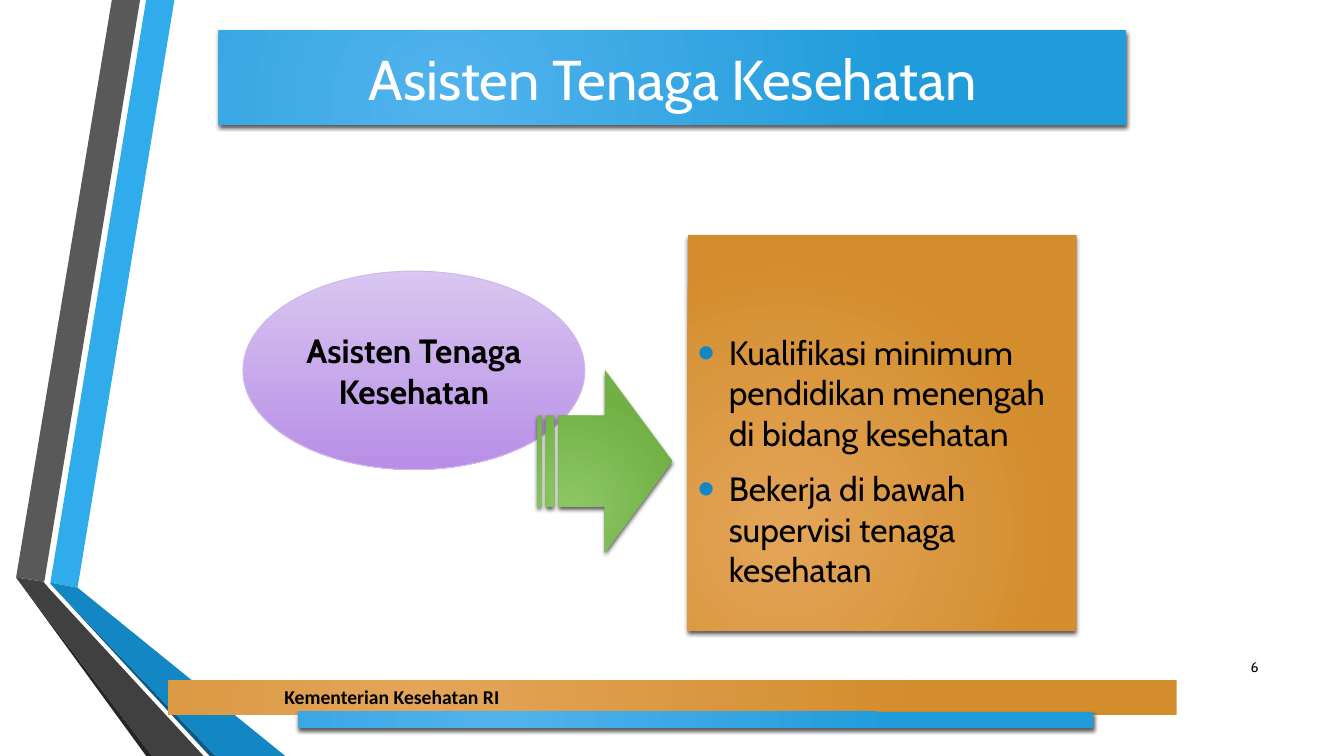
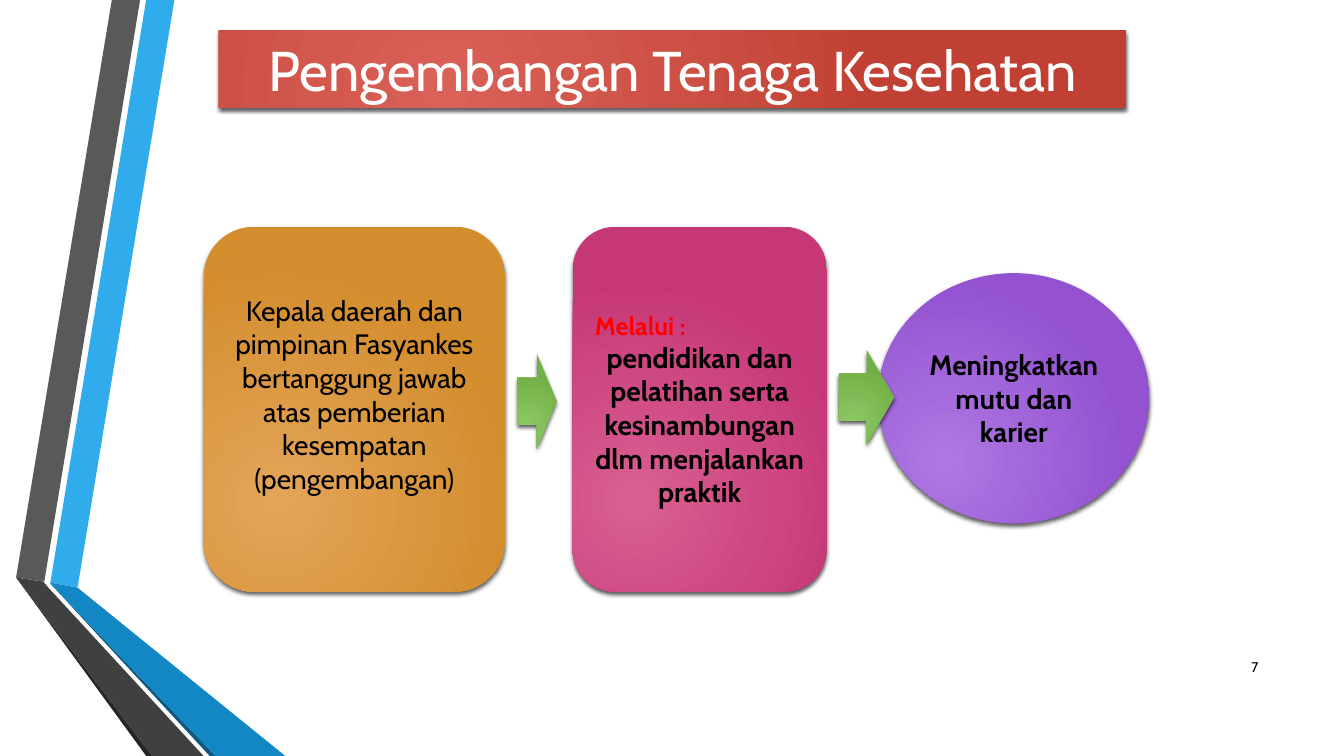
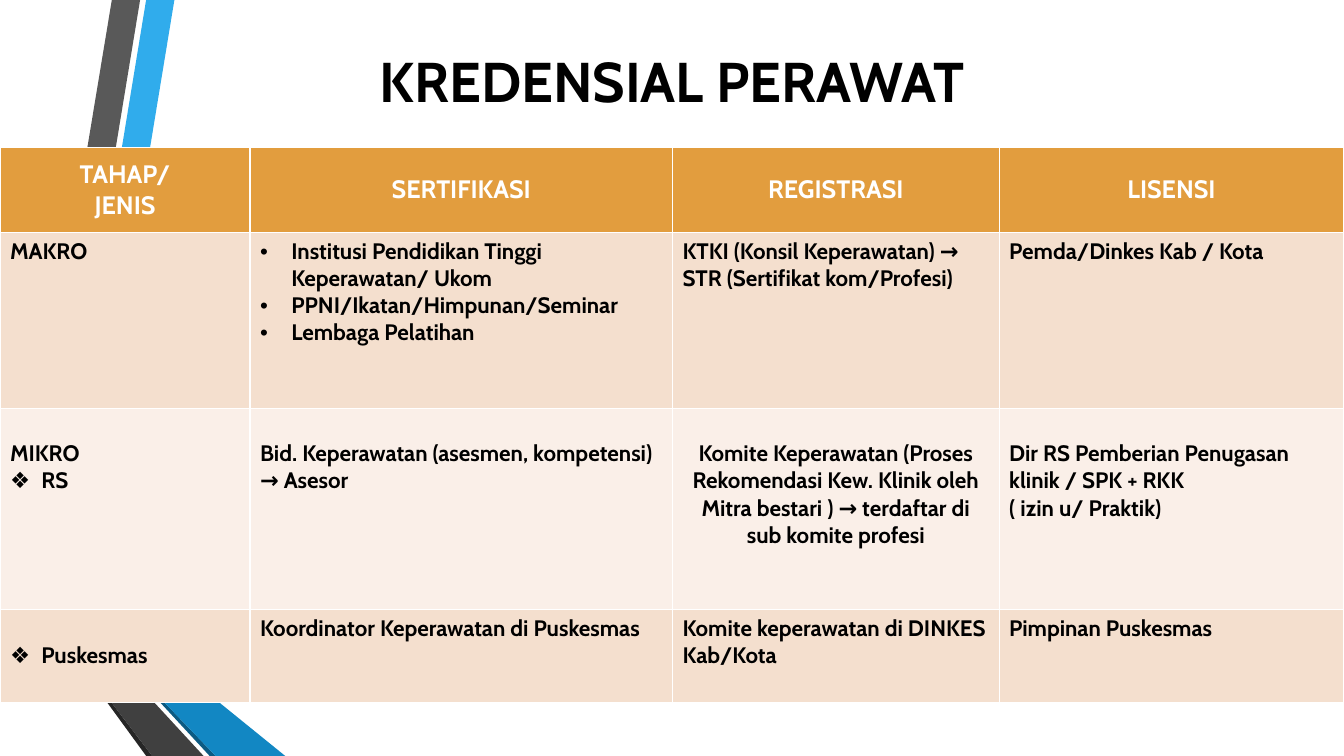
from lxml.etree import SubElement
from pptx import Presentation
from pptx.dml.color import RGBColor
from pptx.enum.shapes import MSO_SHAPE
from pptx.enum.text import MSO_ANCHOR, MSO_AUTO_SIZE, PP_ALIGN
from pptx.oxml.ns import qn
from pptx.util import Inches, Pt

# Shared look
FONT = "Cabin"
FOOTER_FONT = "Calibri"
BLACK = RGBColor(0x00, 0x00, 0x00)
WHITE = RGBColor(0xFF, 0xFF, 0xFF)
RED_TEXT = RGBColor(0xFF, 0x00, 0x00)
BULLET_BLUE = RGBColor(0x12, 0x87, 0xC3)
HEADER_ORANGE = RGBColor(0xE2, 0x9D, 0x3E)
BAND_DARK = RGBColor(0xF4, 0xDF, 0xCE)
BAND_LIGHT = RGBColor(0xFA, 0xEF, 0xE8)
LILAC_LINE = RGBColor(0xD0, 0xB8, 0xEE)

# Gradients: inner or top colour, outer or bottom colour
BLUE = (RGBColor(0x51, 0xB3, 0xED), RGBColor(0x21, 0x9C, 0xDB))
ORANGE = (RGBColor(0xE4, 0xA5, 0x59), RGBColor(0xD3, 0x8D, 0x2D))
RED = (RGBColor(0xD9, 0x61, 0x57), RGBColor(0xC0, 0x40, 0x33))
PINK = (RGBColor(0xD9, 0x5F, 0x92), RGBColor(0xC6, 0x37, 0x77))
PURPLE = (RGBColor(0xAE, 0x78, 0xE3), RGBColor(0x94, 0x52, 0xD1))
GREEN = (RGBColor(0x8C, 0xC7, 0x64), RGBColor(0x72, 0xAF, 0x45))
LILAC = (RGBColor(0xD9, 0xC6, 0xF1), RGBColor(0xB8, 0x8E, 0xE6))

# Ribbon facets: colour and corner points in inches
RIBBON_FACETS = [
    (RGBColor(0x30, 0xAC, 0xEC), [(0.5, 5.78), (0.77, 5.83), (1.73, 0), (1.45, 0)]),
    (RGBColor(0x59, 0x59, 0x59), [(1.39, 0), (1.11, 0), (0.16, 5.73), (0.44, 5.77)]),
    (RGBColor(0x26, 0x26, 0x26), [(0.16, 5.73), (1.45, 7.5), (1.51, 7.5)]),
    (RGBColor(0x0C, 0x5A, 0x82), [(0.5, 5.79), (2.08, 7.5), (2.14, 7.5)]),
    (BULLET_BLUE, [(0.5, 5.79), (2.14, 7.5), (2.83, 7.5), (0.77, 5.83), (0.5, 5.78)]),
    (RGBColor(0x40, 0x40, 0x40),
     [(2.02, 7.5), (0.48, 5.83), (0.43, 5.77), (0.16, 5.73), (1.51, 7.5)]),
]


def inches(box):
    return [Inches(length) for length in box]


def add_ribbon(layout, slide):
    """Build the folded ribbon once and move it to the layout."""
    ribbon = slide.shapes.add_group_shape()
    for colour, points in RIBBON_FACETS:
        corners = [(Inches(x), Inches(y)) for x, y in points]
        builder = ribbon.shapes.build_freeform(*corners[0], scale=1.0)
        builder.add_line_segments(corners[1:], close=True)
        facet = builder.convert_to_shape()
        facet.shadow.inherit = False
        facet.fill.solid()
        facet.fill.fore_color.rgb = colour
        facet.line.fill.background()
    for number, properties in enumerate(ribbon.element.iter(qn("p:cNvPr")), 100):
        properties.set("id", str(number))
    layout.shapes.element.insert(2, ribbon.element)


def paint(shape, colours, radial=True, shadow=True):
    """Two-colour gradient, with an optional soft shadow below."""
    shape.fill.gradient()
    for stop, colour in zip(shape.fill.gradient_stops, colours):
        stop.color.rgb = colour
    if radial:
        gradient = shape.element.spPr.find(qn("a:gradFill"))
        gradient.remove(gradient.find(qn("a:lin")))
        circle = SubElement(gradient, qn("a:path"), path="circle")
        SubElement(circle, qn("a:fillToRect"),
                   l="50000", t="100000", r="100000", b="50000")
    else:
        shape.fill.gradient_angle = 270
    shape.line.fill.background()
    shape.shadow.inherit = False
    if shadow:
        effects = shape.element.spPr.find(qn("a:effectLst"))
        outer = SubElement(effects, qn("a:outerShdw"), blurRad=str(Pt(3)),
                           dist=str(Pt(2)), dir="5400000", rotWithShape="0")
        black = SubElement(outer, qn("a:srgbClr"), val=str(BLACK))
        SubElement(black, qn("a:alpha"), val="64000")


def add_block(shapes, kind, box, colours, **look):
    block = shapes.add_shape(kind, *inches(box))
    paint(block, colours, **look)
    return block


def write(frame, texts, size, colour=BLACK, bold=False, align=PP_ALIGN.CENTER, font=FONT):
    """One paragraph per text; returns the paragraphs."""
    frame.word_wrap = True
    for position, text in enumerate(texts):
        paragraph = frame.add_paragraph() if position else frame.paragraphs[0]
        paragraph.alignment = align
        run = paragraph.add_run()
        run.text = text
        run.font.name = font
        run.font.size = Pt(size)
        run.font.bold = bold
        run.font.color.rgb = colour
    return frame.paragraphs


def add_bullet(paragraph, mark, colour=None, percent=100):
    properties = paragraph._p.get_or_add_pPr()
    properties.set("marL", str(Inches(0.31)))
    properties.set("indent", str(-Inches(0.31)))
    if colour is not None:
        SubElement(SubElement(properties, qn("a:buClr")), qn("a:srgbClr"), val=str(colour))
    SubElement(properties, qn("a:buSzPct"), val=str(percent * 1000))
    SubElement(properties, qn("a:buFont"), typeface="Arial")
    SubElement(properties, qn("a:buChar"), char=mark)


def set_title(slide, box, text, colours=None):
    title = slide.shapes.title
    title.left, title.top, title.width, title.height = inches(box)
    if colours:
        paint(title, colours)
    frame = title.text_frame
    frame.auto_size = MSO_AUTO_SIZE.NONE
    frame.vertical_anchor = MSO_ANCHOR.MIDDLE
    write(frame, [text], 40, WHITE if colours else BLACK, bold=not colours)


def add_page_number(slide, number):
    page = slide.shapes.add_textbox(*inches((11.98, 6.42, 0.6, 0.4))).text_frame
    page.vertical_anchor = MSO_ANCHOR.MIDDLE
    write(page, [str(number)], 10, align=PP_ALIGN.RIGHT)


def add_ministry_footer(slide, box):
    left, top, width, height = box
    footer = slide.shapes.add_group_shape()
    band = add_block(footer.shapes, MSO_SHAPE.RECTANGLE, (left, top, width, height), ORANGE)
    band.text_frame.margin_left = Inches(1.15)
    band.text_frame.vertical_anchor = MSO_ANCHOR.TOP
    write(band.text_frame, ["Kementerian Kesehatan RI"], 14, bold=True,
          align=PP_ALIGN.LEFT, font=FOOTER_FONT)
    add_block(footer.shapes, MSO_SHAPE.RECTANGLE,
              (left + 1.29, top + 0.31, 7.88, 0.16), BLUE)


def add_assistant_definition(slide, box):
    """Term in an ellipse, an arrow, and its definition."""
    left, top, width, height = box
    definition_width = 3.86
    definition = add_block(
        slide.shapes, MSO_SHAPE.RECTANGLE,
        (left + width - definition_width, top, definition_width, height), ORANGE)
    definition.text_frame.margin_top = Inches(0.6)
    definition.text_frame.vertical_anchor = MSO_ANCHOR.MIDDLE
    points = write(definition.text_frame, [
        "Kualifikasi minimum pendidikan menengah di bidang kesehatan",
        "Bekerja di bawah supervisi tenaga kesehatan",
    ], 24, align=PP_ALIGN.LEFT)
    for point in points:
        point.space_before = Pt(5)
        point.space_after = Pt(6)
        add_bullet(point, "•", BULLET_BLUE, 145)

    term = add_block(slide.shapes, MSO_SHAPE.OVAL, (left, top + 0.36, 3.39, 1.97),
                     LILAC, radial=False, shadow=False)
    term.line.color.rgb = LILAC_LINE
    term.line.width = Pt(0.75)
    write(term.text_frame, ["Asisten Tenaga Kesehatan"], 24, bold=True)
    add_block(slide.shapes, MSO_SHAPE.STRIPED_RIGHT_ARROW,
              (left + 2.92, top + 1.34, 1.34, 1.81), GREEN)


def add_development_flow(slide, box):
    """Responsibility, means and result, joined by block arrows."""
    left, top, width, height = box
    duty = add_block(slide.shapes, MSO_SHAPE.ROUNDED_RECTANGLE,
                     (left, top, 2.99, height), ORANGE)
    duty.text_frame.margin_bottom = Inches(0.35)
    write(duty.text_frame, [
        "Kepala daerah dan pimpinan Fasyankes bertanggung jawab atas "
        "pemberian kesempatan (pengembangan)"], 20)

    means = add_block(slide.shapes, MSO_SHAPE.ROUNDED_RECTANGLE,
                      (left + 3.66, top, 2.52, height), PINK)
    lead, _ = write(means.text_frame, [
        "Melalui :",
        "pendidikan dan pelatihan serta kesinambungan dlm menjalankan praktik",
    ], 20, bold=True)
    lead.alignment = PP_ALIGN.LEFT
    lead.runs[0].font.size = Pt(18)
    lead.runs[0].font.color.rgb = RED_TEXT

    result_width = 2.69
    result = add_block(slide.shapes, MSO_SHAPE.OVAL,
                       (left + width - result_width, top + 0.46, result_width, 2.48), PURPLE)
    write(result.text_frame, ["Meningkatkan mutu dan karier"], 20, bold=True)

    for x, y, arrow_width in [(3.11, 1.26, 0.39), (6.3, 1.22, 0.55)]:
        add_block(slide.shapes, MSO_SHAPE.RIGHT_ARROW,
                  (left + x, top + y, arrow_width, 0.94), GREEN)


def format_cell(cell, fill, lowered=False):
    """White borders, plain fill; lowered text starts one line down."""
    properties = cell._tc.get_or_add_tcPr()
    for side in ("lnL", "lnR", "lnT", "lnB"):
        border = SubElement(properties, qn(f"a:{side}"), w=str(Pt(1)))
        SubElement(SubElement(border, qn("a:solidFill")), qn("a:srgbClr"), val=str(WHITE))
    cell.fill.solid()
    cell.fill.fore_color.rgb = fill
    if lowered:
        cell.margin_top = Inches(0.32)


CREDENTIAL_HEADER = [["TAHAP/", "JENIS"], ["SERTIFIKASI"], ["REGISTRASI"], ["LISENSI"]]
# A leading bullet mark in a text becomes a real bullet
CREDENTIAL_ROWS = [
    [["MAKRO"],
     ["•Institusi Pendidikan Tinggi Keperawatan/ Ukom",
      "•PPNI/Ikatan/Himpunan/Seminar",
      "•Lembaga Pelatihan"],
     ["KTKI (Konsil Keperawatan) → STR (Sertifikat kom/Profesi)"],
     ["Pemda/Dinkes Kab / Kota"]],
    [["MIKRO", "❖RS"],
     ["Bid. Keperawatan (asesmen, kompetensi) → Asesor"],
     ["Komite Keperawatan (Proses Rekomendasi Kew. Klinik oleh Mitra bestari ) "
      "→ terdaftar di sub komite profesi"],
     ["Dir RS Pemberian Penugasan klinik / SPK + RKK", "( izin u/ Praktik)"]],
    [["❖Puskesmas"],
     ["Koordinator Keperawatan di Puskesmas"],
     ["Komite keperawatan di DINKES Kab/Kota"],
     ["Pimpinan Puskesmas"]],
]
LOWERED_CELLS = {(2, 0), (2, 1), (2, 2), (2, 3), (3, 0)}
CENTRED_CELL = (2, 2)


def add_credential_table(slide, box):
    column_widths = [2.48, 4.19, 3.24, 3.42]
    row_heights = [0.85, 1.74, 2, 0.92]
    table = slide.shapes.add_table(
        len(row_heights), len(column_widths), *inches(box)).table
    table.horz_banding = False
    for column, column_width in zip(table.columns, column_widths):
        column.width = Inches(column_width)
    for row, row_height in zip(table.rows, row_heights):
        row.height = Inches(row_height)

    for column, texts in enumerate(CREDENTIAL_HEADER):
        heading = table.cell(0, column)
        format_cell(heading, HEADER_ORANGE)
        heading.vertical_anchor = MSO_ANCHOR.MIDDLE
        write(heading.text_frame, texts, 18, WHITE, bold=True)

    for row, entries in enumerate(CREDENTIAL_ROWS, 1):
        for column, texts in enumerate(entries):
            place = (row, column)
            cell = table.cell(row, column)
            format_cell(cell, BAND_DARK if row % 2 else BAND_LIGHT, place in LOWERED_CELLS)
            align = PP_ALIGN.CENTER if place == CENTRED_CELL else PP_ALIGN.LEFT
            lines = write(cell.text_frame, [text.lstrip("•❖") for text in texts],
                          16, bold=True, align=align)
            for line, text in zip(lines, texts):
                if text[0] in "•❖":
                    add_bullet(line, text[0])


def main():
    prs = Presentation()
    prs.slide_width, prs.slide_height = Inches(13.33), Inches(7.5)
    layout = prs.slide_layouts[5]

    # Health assistants
    assistants = prs.slides.add_slide(layout)
    add_ribbon(layout, assistants)
    set_title(assistants, (2.17, 0.3, 9, 0.94), "Asisten Tenaga Kesehatan", BLUE)
    add_page_number(assistants, 6)
    add_assistant_definition(assistants, (2.41, 2.33, 8.27, 3.93))
    add_ministry_footer(assistants, (1.67, 6.75, 10, 0.34))

    # Workforce development
    development = prs.slides.add_slide(layout)
    set_title(development, (2.17, 0.3, 9, 0.77), "Pengembangan Tenaga Kesehatan", RED)
    add_page_number(development, 7)
    add_development_flow(development, (2.02, 2.25, 9.38, 3.62))

    # Nurse credentials
    credentials = prs.slides.add_slide(layout)
    set_title(credentials, (2.77, 0.29, 7.79, 1.01), "KREDENSIAL PERAWAT")
    add_credential_table(credentials, (0, 1.46, 13.33, 5.51))

    prs.save("out.pptx")


if __name__ == "__main__":
    main()
